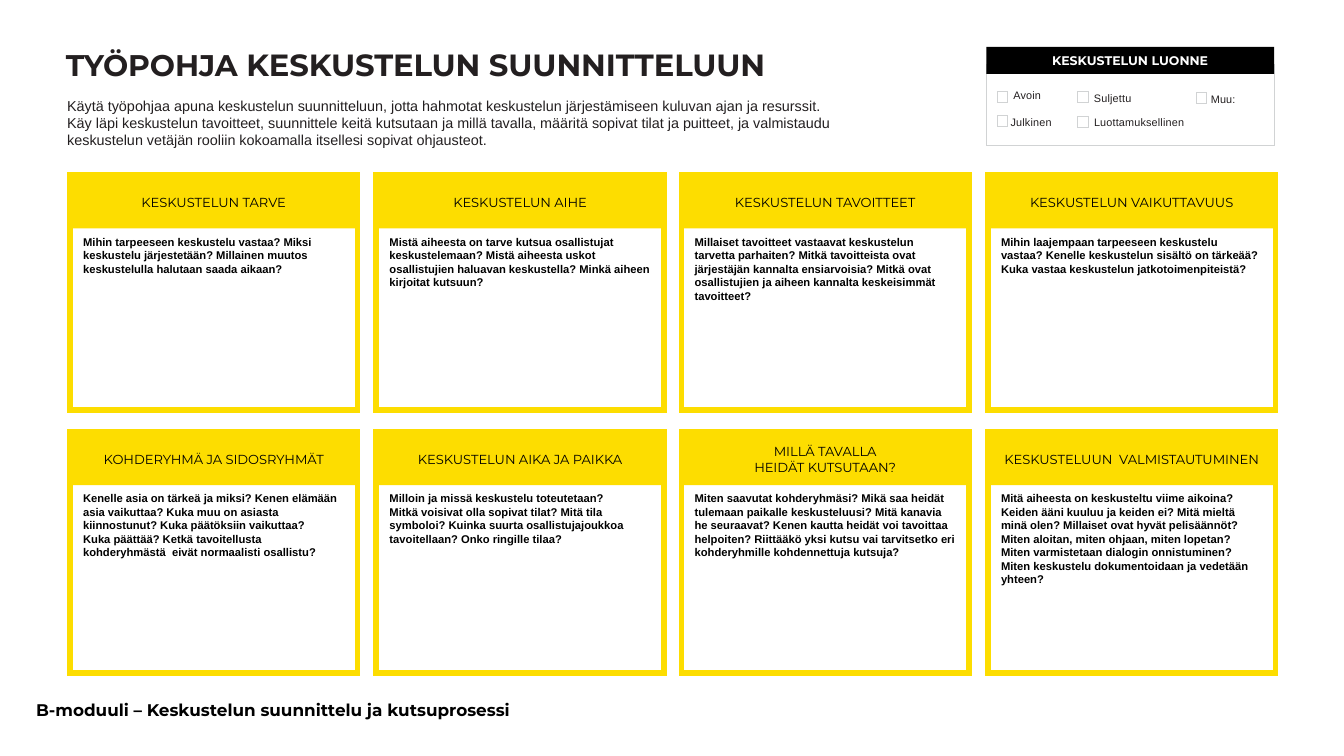
from lxml.etree import SubElement
from pptx import Presentation
from pptx.dml.color import RGBColor
from pptx.enum.shapes import MSO_SHAPE
from pptx.enum.text import MSO_ANCHOR, PP_ALIGN
from pptx.oxml.ns import qn
from pptx.util import Pt

PX = 9144  # 100 px to the inch
COLORS = {
    "black": "000000",
    "white": "FFFFFF",
    "ink": "231F20",
    "gray": "D1D3D4",
    "yellow": "FDDD00",
}
CARDS = [
    [
        ("KESKUSTELUN TARVE",
         "Mihin tarpeeseen keskustelu vastaa? Miksi keskustelu järjestetään? "
         "Millainen muutos keskustelulla halutaan saada aikaan?"),
        ("KESKUSTELUN AIHE",
         "Mistä aiheesta on tarve kutsua osallistujat keskustelemaan? Mistä aiheesta "
         "uskot osallistujien haluavan keskustella? Minkä aiheen kirjoitat kutsuun?"),
        ("KESKUSTELUN TAVOITTEET",
         "Millaiset tavoitteet vastaavat keskustelun tarvetta parhaiten? Mitkä "
         "tavoitteista ovat järjestäjän kannalta ensiarvoisia? Mitkä ovat "
         "osallistujien ja aiheen kannalta keskeisimmät tavoitteet?"),
        ("KESKUSTELUN VAIKUTTAVUUS",
         "Mihin laajempaan tarpeeseen keskustelu vastaa? Kenelle keskustelun sisältö "
         "on tärkeää?\nKuka vastaa keskustelun jatkotoimenpiteistä?"),
    ],
    [
        ("KOHDERYHMÄ JA SIDOSRYHMÄT",
         "Kenelle asia on tärkeä ja miksi? Kenen elämään asia vaikuttaa? Kuka muu on "
         "asiasta kiinnostunut? Kuka päätöksiin vaikuttaa?\nKuka päättää? Ketkä "
         "tavoitellusta kohderyhmästä  eivät normaalisti osallistu?"),
        ("KESKUSTELUN AIKA JA PAIKKA",
         "Milloin ja missä keskustelu toteutetaan?\nMitkä voisivat olla sopivat tilat? "
         "Mitä tila symboloi? Kuinka suurta osallistujajoukkoa tavoitellaan? "
         "Onko ringille tilaa?"),
        ("MILLÄ TAVALLA\nHEIDÄT KUTSUTAAN?",
         "Miten saavutat kohderyhmäsi? Mikä saa heidät tulemaan paikalle "
         "keskusteluusi? Mitä kanavia he seuraavat? Kenen kautta heidät voi tavoittaa "
         "helpoiten? Riittääkö yksi kutsu vai tarvitsetko eri kohderyhmille "
         "kohdennettuja kutsuja?"),
        ("KESKUSTELUUN  VALMISTAUTUMINEN",
         "Mitä aiheesta on keskusteltu viime aikoina? Keiden ääni kuuluu ja keiden ei? "
         "Mitä mieltä minä olen? Millaiset ovat hyvät pelisäännöt?\n"
         "Miten aloitan, miten ohjaan, miten lopetan?\n"
         "Miten varmistetaan dialogin onnistuminen?\n"
         "Miten keskustelu dokumentoidaan ja vedetään yhteen?"),
    ],
]
# Choice, then box and label offsets inside the panel
CHOICES = [
    ("Avoin", (8, 33), (20, 30)),
    ("Julkinen", (8, 51), (18, 50)),
    ("Suljettu", (68, 33), (80, 32)),
    ("Luottamuksellinen", (68, 52), (80, 50)),
    ("Muu:", (156, 34), (167, 33)),
]


def tint(name):
    return RGBColor.from_string(COLORS[name])


def rect(slide, x, y, w, h, fill=None, line=None, width=0.5):
    shape = slide.shapes.add_shape(
        MSO_SHAPE.RECTANGLE, x * PX, y * PX, w * PX, h * PX)
    shape.shadow.inherit = False
    if fill:
        shape.fill.solid()
        shape.fill.fore_color.rgb = tint(fill)
    else:
        shape.fill.background()
    if line:
        shape.line.color.rgb = tint(line)
        shape.line.width = Pt(width)
        # Sharp corners
        edge = shape.line._get_or_add_ln()
        SubElement(edge, qn("a:miter"), lim="800000")
    else:
        shape.line.fill.background()
    return shape


def write(slide, box, text, size, font="Arial", color="black", bold=False,
          align=PP_ALIGN.LEFT, anchor=MSO_ANCHOR.TOP, inset=(10, 5, 10, 5),
          fill=None, space=0):
    """Write text in a box; a list of (text, size) pairs gives mixed sizes."""
    if fill:
        shape = rect(slide, *box, fill=fill)
    else:
        shape = slide.shapes.add_textbox(*(side * PX for side in box))
    frame = shape.text_frame
    frame.word_wrap = True
    frame.vertical_anchor = anchor
    (frame.margin_left, frame.margin_top,
     frame.margin_right, frame.margin_bottom) = (side * PX for side in inset)
    para = frame.paragraphs[0]
    para.alignment = align
    parts = [(text, size)] if isinstance(text, str) else text
    for words, points in parts:
        for i, row in enumerate(words.split("\n")):
            if i:
                para.add_line_break()
            run = para.add_run()
            run.text = row
            run.font.size = Pt(points)
            run.font.name = font
            run.font.bold = bold
            run.font.color.rgb = tint(color)
            if space:
                run._r.get_or_add_rPr().set("spc", str(space))


def intro(slide, x, y, w):
    write(slide, (x, y, w, 28),
          [("TYÖPOHJA", 16), (" KESKUSTELUN SUUNNITTELUUN", 16.35)], 16,
          font="Montserrat", color="ink", bold=True,
          anchor=MSO_ANCHOR.MIDDLE, inset=(0, 1, 0, 0))
    write(slide, (x + 1, y + 38, 575, 40),
          "Käytä työpohjaa apuna keskustelun suunnitteluun, jotta hahmotat "
          "keskustelun järjestämiseen kuluvan ajan ja resurssit. Käy läpi "
          "keskustelun tavoitteet, suunnittele keitä kutsutaan ja millä tavalla, "
          "määritä sopivat tilat ja puitteet, ja valmistaudu keskustelun vetäjän "
          "rooliin kokoamalla itsellesi sopivat ohjausteot.",
          7.7, color="ink", inset=(0, 1, 0, 0))


def panel(slide, x, y, w, h):
    rect(slide, x, y + 13, w, h - 13, line="gray")
    write(slide, (x, y, w, 20), "KESKUSTELUN LUONNE", 6.7, font="Montserrat",
          color="white", bold=True, align=PP_ALIGN.CENTER,
          anchor=MSO_ANCHOR.MIDDLE, inset=(0, 0, 0, 0), fill="black")
    for text, (left, top), (dx, dy) in CHOICES:
        rect(slide, x + left, y + top, 8, 8, line="gray")
        wide = 69 if len(text) > 10 else 40
        write(slide, (x + dx, y + dy, wide, 10), text, 5.8,
              color="ink", inset=(0, 1, 0, 0), space=10)


def card(slide, x, y, w, h, head, body):
    rect(slide, x, y, w, h, line="yellow", width=3)
    write(slide, (x, y + 1, w, 39), head, 7, font="Montserrat",
          align=PP_ALIGN.CENTER, anchor=MSO_ANCHOR.MIDDLE,
          inset=(8, 8, 8, 8), fill="yellow")
    write(slide, (x, y + 40, w, h - 40), body, 6, bold=True)


def grid(slide, x, y, w):
    wide = 214
    step = (w - wide) / 3
    for row, high in zip(CARDS, (175, 180)):
        for col, (head, body) in enumerate(row):
            card(slide, x + round(col * step), y, wide, high, head, body)
        y += high + 16


def main():
    deck = Presentation()
    deck.slide_width = 1000 * PX
    deck.slide_height = deck.slide_width * 9 // 16
    slide = deck.slides.add_slide(deck.slide_layouts[6])
    # Top: title, guide and choices
    intro(slide, 49, 33, 633)
    panel(slide, 734, 35, 214, 73)
    # Middle: question cards
    grid(slide, 52, 130, 897)
    # Bottom: module name
    write(slide, (17, 516, 500, 25),
          "B-moduuli – Keskustelun suunnittelu ja kutsuprosessi", 9,
          font="Montserrat", bold=True)
    deck.save("out.pptx")


if __name__ == "__main__":
    main()
